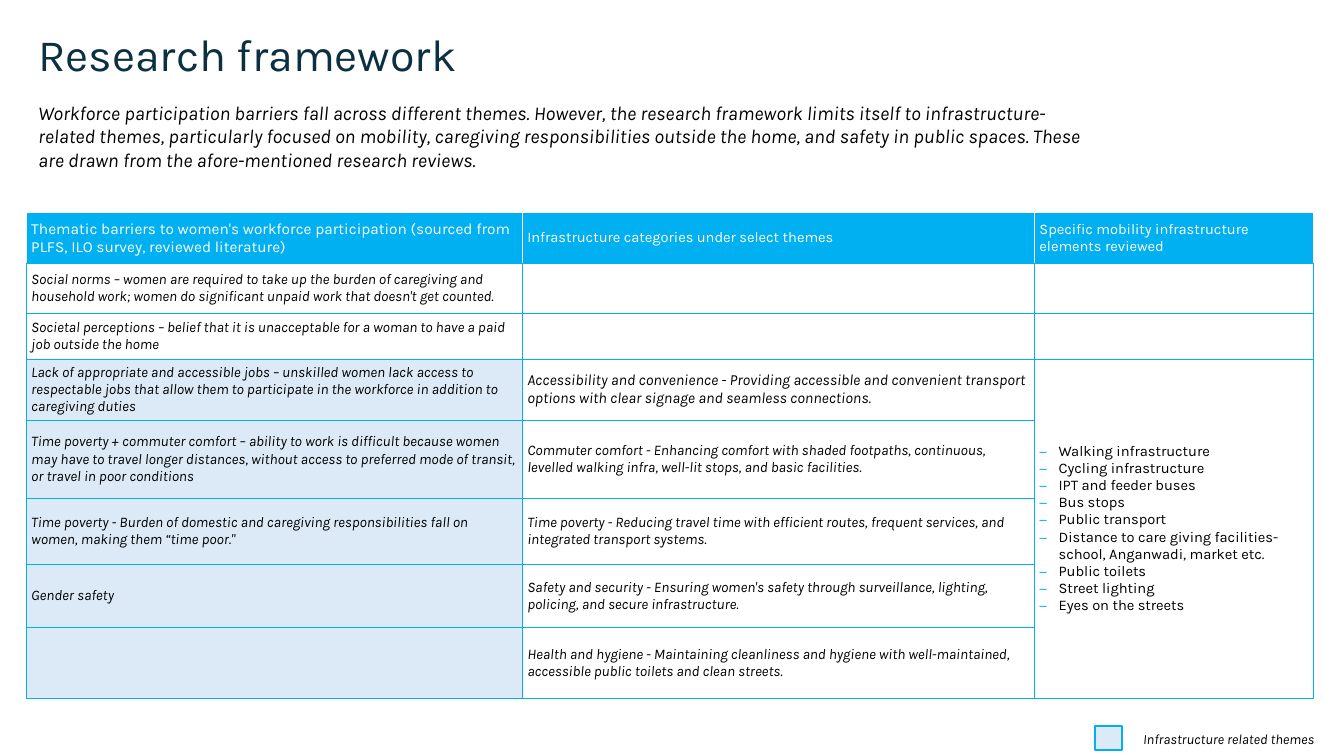
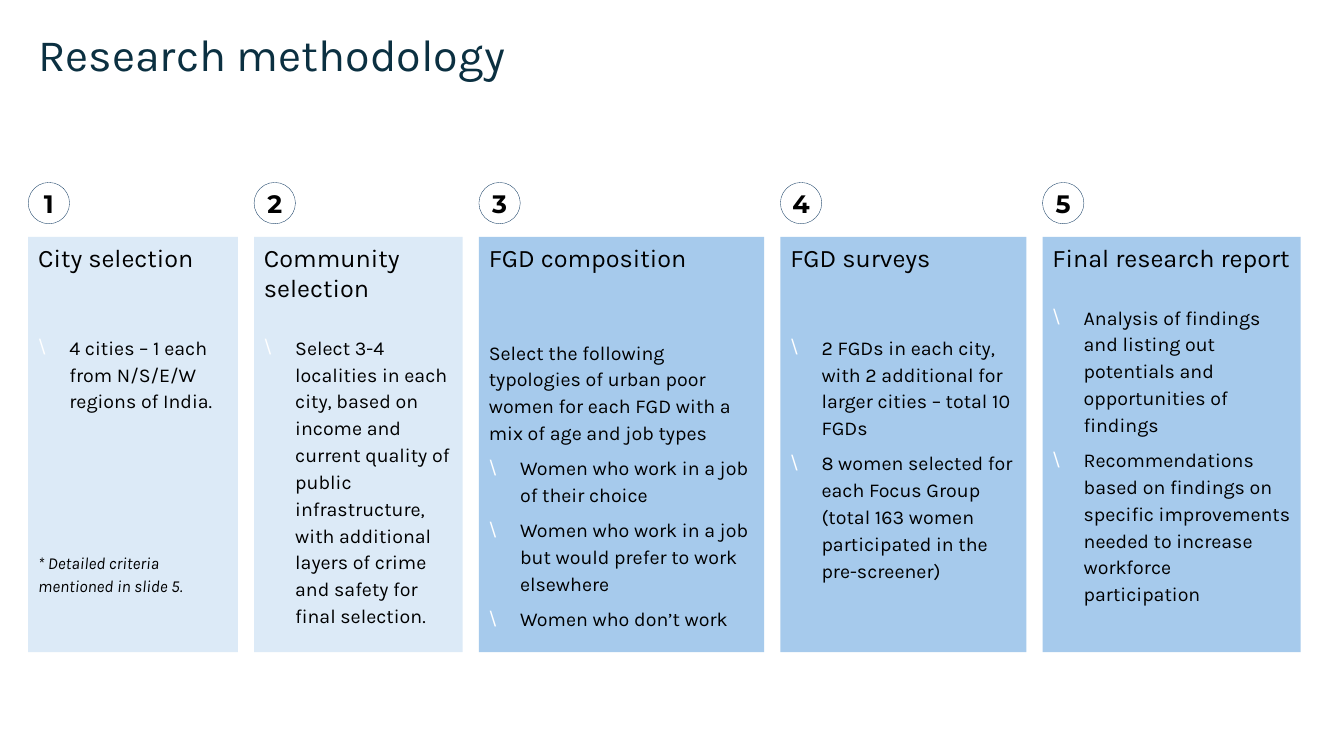
from lxml import etree
from pptx import Presentation
from pptx.dml.color import RGBColor
from pptx.enum.shapes import MSO_SHAPE
from pptx.enum.text import MSO_ANCHOR, MSO_AUTO_SIZE, PP_ALIGN
from pptx.oxml.ns import qn
from pptx.util import Emu, Pt

RECT, OVAL = MSO_SHAPE.RECTANGLE, MSO_SHAPE.OVAL
TOP, MIDDLE = MSO_ANCHOR.TOP, MSO_ANCHOR.MIDDLE
LEFT, CENTER = PP_ALIGN.LEFT, PP_ALIGN.CENTER
NO_FIT = MSO_AUTO_SIZE.NONE

SCALE = 9144
FACE, BOLD_FACE = "Karla", "Montserrat"
NAVY, CYAN, PALE, BLUE = "0B3041", "00B0F0", "DCEAF7", "A6CAEC"
WHITE, BLACK, RING = "FFFFFF", "000000", "163E64"

INTRO = (
    "Workforce participation barriers fall across different themes. However, the research "
    "framework limits itself to infrastructure-related themes, particularly focused on mobility, "
    "caregiving responsibilities outside the home, and safety in public spaces. These are drawn "
    "from the afore-mentioned research reviews."
)
LEGEND = "Infrastructure related themes"
HEADS = [
    ("Thematic barriers to women's workforce participation (sourced from PLFS, ILO survey, "
     "reviewed literature)", 11),
    ("Infrastructure categories under select themes", 10.5),
    ("Specific mobility infrastructure elements reviewed", 10.5),
]
THEMES = [
    ("Social norms – women are required to take up the burden of caregiving and household work; "
     "women do significant unpaid work that doesn't get counted.", "", 10.5),
    ("Societal perceptions – belief that it is unacceptable for a woman to have a paid job "
     "outside the home", "", 10.5),
    ("Lack of appropriate and accessible jobs – unskilled women lack access to respectable jobs "
     "that allow them to participate in the workforce in addition to caregiving duties",
     "Accessibility and convenience - Providing accessible and convenient transport options "
     "with clear signage and seamless connections.", 11),
    ("Time poverty + commuter comfort – ability to work is difficult because women may have to "
     "travel longer distances, without access to preferred mode of transit, or travel in poor "
     "conditions",
     "Commuter comfort - Enhancing comfort with shaded footpaths, continuous, levelled walking "
     "infra, well-lit stops, and basic facilities.", 10.5),
    ("Time poverty - Burden of domestic and caregiving responsibilities fall on women, making "
     "them “time poor.\"",
     "Time poverty - Reducing travel time with efficient routes, frequent services, and "
     "integrated transport systems.", 10.5),
    ("Gender safety",
     "Safety and security - Ensuring women's safety through surveillance, lighting, policing, "
     "and secure infrastructure.", 10.5),
    ("", "Health and hygiene - Maintaining cleanliness and hygiene with well-maintained, "
     "accessible public toilets and clean streets.", 10.5),
]
ITEMS = [
    "Walking infrastructure", "Cycling infrastructure", "IPT and feeder buses", "Bus stops",
    "Public transport", "Distance to care giving facilities- school, Anganwadi, market etc.",
    "Public toilets", "Street lighting", "Eyes on the streets",
]
COLS = [492, 508, 276]
ROWS = [50, 50, 45, 60, 77, 66, 62, 71]
FIRST = 3

STEPS = [
    {"head": "City selection", "wide": 208, "fill": PALE, "gap": 43,
     "list": ["4 cities – 1 each from N/S/E/W regions of India."],
     "note": "* Detailed criteria mentioned in slide 5."},
    {"head": "Community selection", "wide": 207, "fill": PALE, "gap": 21.5,
     "list": ["Select 3-4 localities in each city, based on income and current quality of public "
              "infrastructure, with additional layers of crime and safety for final selection."]},
    {"head": "FGD composition", "wide": 283, "fill": BLUE, "gap": 46.5,
     "lead": "Select the following typologies of urban poor women for each FGD with a mix of age "
             "and job types",
     "list": ["Women who work in a job of their choice",
              "Women who work in a job but would prefer to work elsewhere",
              "Women who don’t work"]},
    {"head": "FGD surveys", "wide": 244, "fill": BLUE, "gap": 43,
     "list": ["2 FGDs in each city, with 2 additional for larger cities – total 10 FGDs",
              "8 women selected for each Focus Group (total 163 women participated in the "
              "pre-screener)"]},
    {"head": "Final research report", "wide": 256, "fill": BLUE, "gap": 21.5,
     "list": ["Analysis of findings and listing out potentials and opportunities of findings",
              "Recommendations based on findings on specific improvements needed to increase "
              "workforce participation"]},
]
START, GAP = 28, 16


def px(n):
    return Emu(n * SCALE)


def rgb(tone):
    return RGBColor.from_string(tone)


def node(parent, tag, **attrs):
    return etree.SubElement(parent, qn(tag), attrs)


def tint(parent, tone):
    node(node(parent, "a:solidFill"), "a:srgbClr", val=tone)


def style(para, size, tone=BLACK, face=FACE, bold=False, slant=False):
    font = para.font
    font.name, font.size, font.bold, font.italic = face, Pt(size), bold, slant
    font.color.rgb = rgb(tone)


def bullet(para, mark, tone, dent):
    props = para._p.get_or_add_pPr()
    props.set("marL", str(px(dent)))
    props.set("indent", str(-px(dent)))
    node(node(props, "a:buClr"), "a:srgbClr", val=tone)
    node(props, "a:buFont", typeface=FACE)
    node(props, "a:buChar", char=mark)


def write(frame, index, text):
    para = frame.paragraphs[0] if index == 0 else frame.add_paragraph()
    para.text = text
    para.alignment = LEFT
    return para


def page(deck, text):
    slide = deck.slides.add_slide(deck.slide_layouts[5])
    title = slide.shapes.title
    title.left, title.top, title.width, title.height = map(px, (28, 28, 1249, 40))
    frame = title.text_frame
    frame.vertical_anchor, frame.auto_size = TOP, NO_FIT
    para = write(frame, 0, text)
    para.line_spacing = 0.9
    style(para, 32, NAVY)
    return slide


def label(slide, box, text, size):
    frame = slide.shapes.add_textbox(*map(px, box)).text_frame
    frame.word_wrap = True
    style(write(frame, 0, text), size, slant=True)


def block(slide, kind, box, fill, line=None, weight=0.25):
    shape = slide.shapes.add_shape(kind, *map(px, box))
    shape.shadow.inherit = False
    shape.fill.solid()
    shape.fill.fore_color.rgb = rgb(fill)
    if line:
        shape.line.color.rgb = rgb(line)
        shape.line.width = Pt(weight)
    else:
        shape.line.fill.background()
    return shape


def edge(cell, side):
    props = cell._tc.get_or_add_tcPr()
    for i, (tag, tone) in enumerate(zip("LRTB", (side, side, CYAN, CYAN))):
        line = etree.Element(qn("a:ln" + tag), w=str(Pt(0.25)))
        tint(line, tone)
        props.insert(i, line)


def fill_cell(cell, text, fill, size, tone=BLACK, slant=True, side=CYAN):
    cell.fill.solid()
    cell.fill.fore_color.rgb = rgb(fill)
    edge(cell, side)
    cell.margin_left = cell.margin_right = cell.margin_top = cell.margin_bottom = px(5)
    cell.vertical_anchor = MIDDLE
    style(write(cell.text_frame, 0, text), size, tone, slant=slant)


def draw_grid(slide):
    box = map(px, (26, 211, sum(COLS), sum(ROWS)))
    grid = slide.shapes.add_table(len(ROWS), len(COLS), *box).table
    grid.first_row = grid.horz_banding = False
    for col, wide in zip(grid.columns, COLS):
        col.width = px(wide)
    for row, high in zip(grid.rows, ROWS):
        row.height = px(high)
    for c, (text, size) in enumerate(HEADS):
        fill_cell(grid.cell(0, c), text, CYAN, size, WHITE, False, WHITE)
    for r, (theme, group, size) in enumerate(THEMES, 1):
        fill_cell(grid.cell(r, 0), theme, PALE if r >= FIRST else WHITE, 10.5)
        fill_cell(grid.cell(r, 1), group, WHITE, size)
        fill_cell(grid.cell(r, 2), "", WHITE, 10.5)
    cell = grid.cell(FIRST, 2)
    cell.merge(grid.cell(len(THEMES), 2))
    for i, text in enumerate(ITEMS):
        para = write(cell.text_frame, i, text)
        bullet(para, "−", CYAN, 19)
        style(para, 10.5)


def draw_step(slide, num, step, left):
    badge = block(slide, OVAL, (left, 181, 41, 41), WHITE, RING).text_frame
    badge.margin_left = badge.margin_right = badge.margin_top = badge.margin_bottom = 0
    badge.vertical_anchor, badge.word_wrap = MIDDLE, False
    para = write(badge, 0, str(num))
    para.alignment = CENTER
    style(para, 18, face=BOLD_FACE, bold=True)

    frame = block(slide, RECT, (left, 235, step["wide"], 412), step["fill"]).text_frame
    frame.vertical_anchor, frame.word_wrap = TOP, True
    head = write(frame, 0, step["head"])
    head.space_after = Pt(step["gap"])
    style(head, 18)
    lines = [(text, kind) for kind in ("lead", "list", "note") if kind in step
             for text in (step[kind] if kind == "list" else [step[kind]])]
    for i, (text, kind) in enumerate(lines, 1):
        para = write(frame, i, text)
        if kind == "list":
            bullet(para, "\\", WHITE, 31)
        para.line_spacing, para.space_after = 1.14, Pt(6)
        if kind == "note":
            para.space_before = Pt(92)
        style(para, 12 if kind == "note" else 14, slant=kind == "note")


def main():
    deck = Presentation()
    deck.slide_width, deck.slide_height = px(1333), px(750)

    slide = page(deck, "Research framework")
    draw_grid(slide)
    block(slide, RECT, (1086, 720, 27, 24), PALE, CYAN, 1.5)
    label(slide, (1124, 720, 195, 27), LEGEND, 10)
    label(slide, (28, 95, 1072, 81), INTRO, 14)

    slide = page(deck, "Research methodology")
    left = START
    for num, step in enumerate(STEPS, 1):
        draw_step(slide, num, step, left)
        left += step["wide"] + GAP

    deck.save("out.pptx")


if __name__ == "__main__":
    main()
